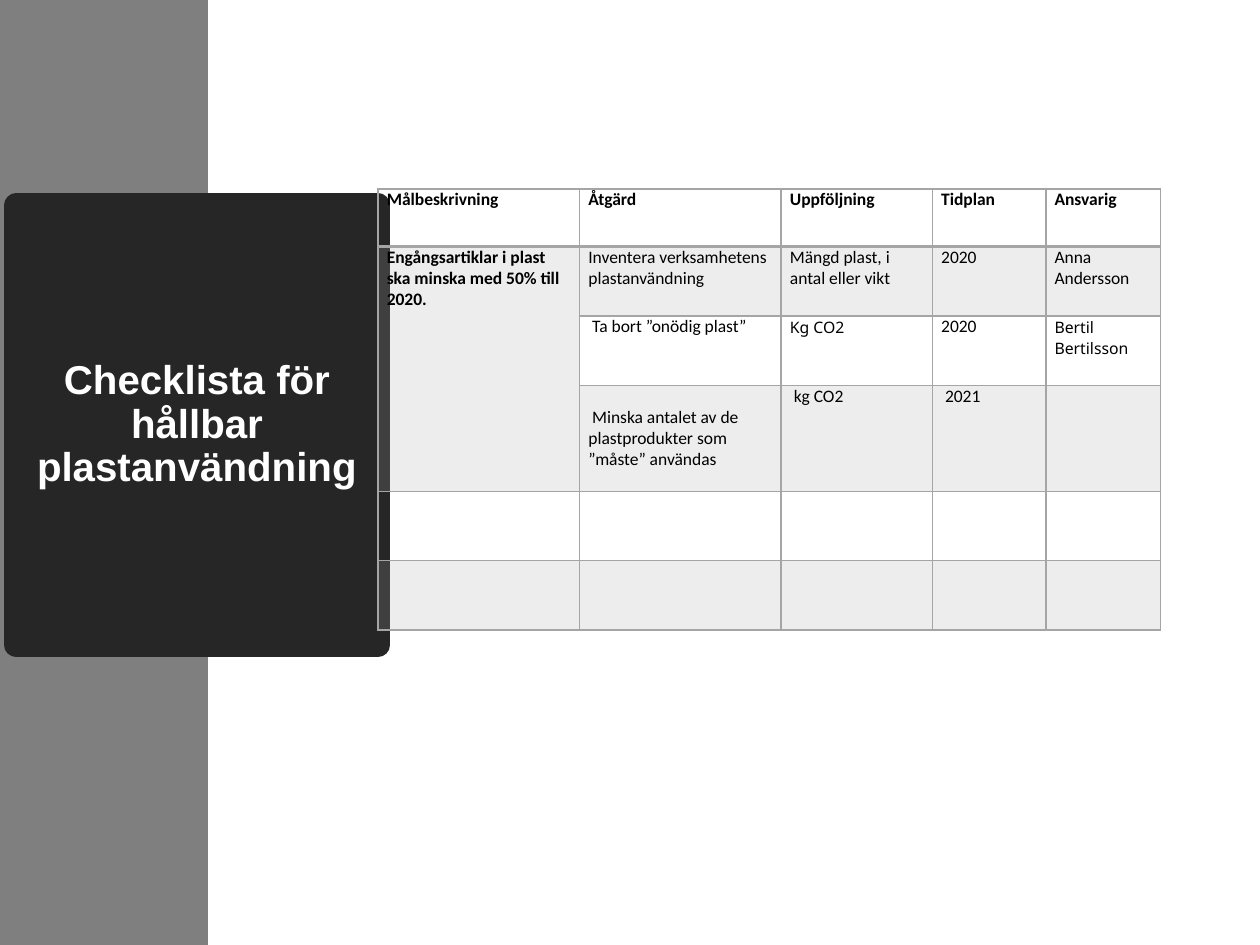
from lxml.etree import SubElement
from pptx import Presentation
from pptx.dml.color import RGBColor
from pptx.enum.shapes import MSO_SHAPE
from pptx.enum.text import MSO_ANCHOR, MSO_AUTO_SIZE, PP_ALIGN
from pptx.oxml import parse_xml
from pptx.oxml.ns import nsdecls, qn
from pptx.util import Inches, Pt

GREY = "A5A5A5"
COLUMNS = [1.6, 1.6, 1.2, 0.9, 0.91]
ROWS = [0.46, 0.55, 0.55, 0.84, 0.55, 0.55]
CELLS = [
    ["Målbeskrivning", "Åtgärd", "Uppföljning", "Tidplan", "Ansvarig"],
    ["Engångsartiklar i plast ska minska med 50% till 2020.",
     "Inventera verksamhetens plastanvändning",
     "Mängd plast, i antal eller vikt", "2020", "Anna Andersson"],
    ["", "Ta bort ”onödig plast”", "Kg CO2", "2020", "Bertil Bertilsson"],
    ["", "Minska antalet av de plastprodukter som ”måste” användas",
     "kg CO2", "2021", ""],
    [""] * 5,
    [""] * 5,
]
NOTO_CELLS = {(2, 2), (2, 4)}
INDENTED_CELLS = {(2, 1), (3, 1), (3, 2), (3, 3)}
LOWERED_CELLS = {(3, 1)}


def rgb(value):
    return RGBColor.from_string(value)


class Deck:
    def __init__(self, prs):
        self.prs = prs
        self.s = prs.slides.add_slide(prs.slide_layouts[5])

    def place(self, x, y, w, h):
        width, height = self.prs.slide_width, self.prs.slide_height
        return [int(v) for v in (x * width, y * height, w * width, h * height)]

    def format(self, p, size, font, color, bold):
        for r in p.runs:
            r.font.size = Pt(size)
            r.font.name = font
            r.font.bold = bold
            r.font.color.rgb = rgb(color)

    def band(self, share, color):
        sp = self.s.shapes.add_shape(MSO_SHAPE.RECTANGLE, *self.place(0, 0, share, 1))
        sp.shadow.inherit = False
        sp.fill.solid()
        sp.fill.fore_color.rgb = rgb(color)
        sp.line.fill.background()
        self.s.shapes.title._element.addprevious(sp._element)

    def title(self, text, box, color):
        sp = self.s.shapes.title
        sp.left, sp.top, sp.width, sp.height = self.place(*box)
        sp.fill.solid()
        sp.fill.fore_color.rgb = rgb(color)
        sp.line.color.rgb = rgb(color)
        sp.line.width = Pt(13.75)
        SubElement(sp.line._get_or_add_ln(), qn("a:round"))
        tf = sp.text_frame
        tf.text = text
        tf.word_wrap = True
        tf.auto_size = MSO_AUTO_SIZE.NONE
        tf.vertical_anchor = MSO_ANCHOR.MIDDLE
        p = tf.paragraphs[0]
        p.alignment = PP_ALIGN.CENTER
        p.line_spacing = 0.9
        self.format(p, 23, "Arial", "FFFFFF", True)

    def borders(self, cell, row):
        widths = {"lnL": 1, "lnR": 1, "lnT": 2 if row == 1 else 1,
                  "lnB": 2 if row == 0 else 1}
        tcPr = cell._tc.get_or_add_tcPr()
        for i, (side, width) in enumerate(widths.items()):
            tcPr.insert(i, parse_xml(
                f'<a:{side} {nsdecls("a")} w="{Pt(width)}"><a:solidFill>'
                f'<a:srgbClr val="{GREY}"/></a:solidFill></a:{side}>'))

    def shade(self, cell, row):
        if row % 2:
            cell.fill.solid()
            cell.fill.fore_color.rgb = rgb(GREY)
            color = cell._tc.tcPr.find(qn("a:solidFill"))[0]
            SubElement(color, qn("a:alpha"), val="20000")
        else:
            cell.fill.background()

    def table(self, x, y):
        box = self.place(x, y, sum(COLUMNS) / 10, sum(ROWS) / 7.5)
        table = self.s.shapes.add_table(len(ROWS), len(COLUMNS), *box).table
        table.first_row = table.horz_banding = False
        for column, width in zip(table.columns, COLUMNS):
            column.width = Inches(width)
        for row, height in zip(table.rows, ROWS):
            row.height = Inches(height)
        for i, texts in enumerate(CELLS):
            for j, text in enumerate(texts):
                cell, key = table.cell(i, j), (i, j)
                cell.margin_left = Inches(0.1 if key in INDENTED_CELLS else 0.07)
                cell.margin_right = Inches(0.07)
                cell.margin_top = Inches(0.17 if key in LOWERED_CELLS else 0)
                cell.margin_bottom = 0
                self.shade(cell, i)
                self.borders(cell, i)
                p = cell.text_frame.paragraphs[0]
                if text:
                    p.text = text
                size, font = (9, "Noto Sans") if key in NOTO_CELLS else (10, "Calibri")
                self.format(p, size, font, "000000", i == 0 or j == 0)
                if key in INDENTED_CELLS:
                    pPr = p._p.get_or_add_pPr()
                    pPr.set("marL", str(Inches(0)))
                    if key in LOWERED_CELLS:
                        cell.margin_left = Inches(0.07)
                        pPr.set("indent", str(Inches(0.03)))
        table.cell(1, 0).merge(table.cell(3, 0))


def main():
    prs = Presentation()
    prs.slide_width, prs.slide_height = Inches(10), Inches(7.5)
    deck = Deck(prs)
    deck.band(0.165, "7F7F7F")
    deck.title("Checklista för hållbar plastanvändning",
               (0.013, 1.63 / 7.5, 0.287, 3.49 / 7.5), "262626")
    deck.table(0.3, 0.2)
    prs.save("out.pptx")


if __name__ == "__main__":
    main()
